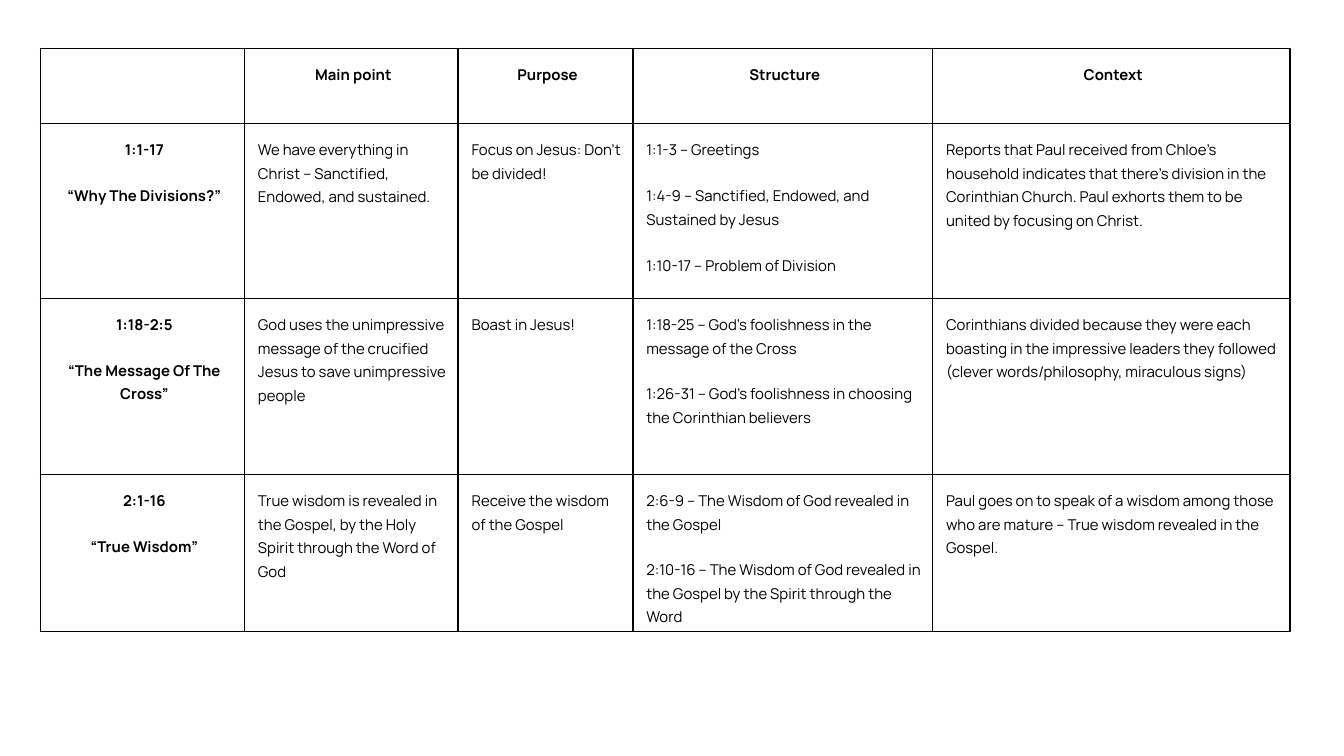
from pptx import Presentation
from pptx.dml.color import RGBColor
from pptx.enum.text import PP_ALIGN
from pptx.oxml import parse_xml
from pptx.oxml.ns import nsdecls
from pptx.util import Inches, Pt

HEADINGS = ["", "Main point", "Purpose", "Structure", "Context"]
PASSAGES = [
    [
        ["1:1-17", "“Why The Divisions?”"],
        ["We have everything in Christ – Sanctified, Endowed, and sustained."],
        ["Focus on Jesus: Don’t be divided!"],
        [
            "1:1-3 – Greetings",
            "1:4-9 – Sanctified, Endowed, and Sustained by Jesus",
            "1:10-17 – Problem of Division",
        ],
        ["Reports that Paul received from Chloe’s household indicates that there’s division "
         "in the Corinthian Church. Paul exhorts them to be united by focusing on Christ."],
    ],
    [
        ["1:18-2:5", "“The Message Of The Cross”"],
        ["God uses the unimpressive message of the crucified Jesus to save unimpressive people"],
        ["Boast in Jesus!"],
        [
            "1:18-25 – God’s foolishness in the message of the Cross",
            "1:26-31 – God’s foolishness in choosing the Corinthian believers",
        ],
        ["Corinthians divided because they were each boasting in the impressive leaders "
         "they followed (clever words/philosophy, miraculous signs)"],
    ],
    [
        ["2:1-16", "“True Wisdom”"],
        ["True wisdom is revealed in the Gospel, by the Holy Spirit through the Word of God"],
        ["Receive the wisdom of the Gospel"],
        [
            "2:6-9 – The Wisdom of God revealed in the Gospel",
            "2:10-16 – The Wisdom of God revealed in the Gospel by the Spirit through the Word",
        ],
        ["Paul goes on to speak of a wisdom among those who are mature – "
         "True wisdom revealed in the Gospel."],
    ],
]
SLIDE_WIDTH = Inches(10)
SLIDE_HEIGHT = SLIDE_WIDTH * 9 // 16
COLUMN_WIDTHS = [1.52, 1.59, 1.3, 2.23, 2.66]
ROW_HEIGHTS = [0.56, 1.3, 1.31, 1.17]
INK = "000000"
MARGINS = {
    "margin_left": Inches(0.07),
    "margin_top": Inches(0.1),
    "margin_right": Inches(0.07),
    "margin_bottom": 0,
}
SPACING = {"line_spacing": 1.15, "space_before": Pt(12)}
FONT = {"name": "Manrope", "size": Pt(8)}


def apply(target, values):
    for name, value in values.items():
        setattr(target, name, value)


def paint(color, value):
    color.rgb = RGBColor.from_string(value)


def add_borders(cell):
    properties = cell._tc.get_or_add_tcPr()
    for position, side in enumerate(("lnL", "lnR", "lnT", "lnB")):
        properties.insert(position, parse_xml(
            f'<a:{side} {nsdecls("a")} w="{Pt(1)}"><a:solidFill>'
            f'<a:srgbClr val="{INK}"/></a:solidFill></a:{side}>'))


def fill_cell(cell, lines, is_label):
    apply(cell, MARGINS)
    cell.fill.background()
    add_borders(cell)
    cell.text_frame.text = "\n".join(lines)
    for paragraph in cell.text_frame.paragraphs:
        apply(paragraph, SPACING)
        paragraph.alignment = PP_ALIGN.CENTER if is_label else PP_ALIGN.LEFT
        indent = paragraph._p.get_or_add_pPr()
        indent.set("marL", str(Inches(0.03)))
        indent.set("indent", "0")
        for run in paragraph.runs:
            apply(run.font, FONT)
            run.font.bold = is_label
            paint(run.font.color, INK)


def main():
    deck = Presentation()
    deck.slide_width, deck.slide_height = SLIDE_WIDTH, SLIDE_HEIGHT
    slide = deck.slides.add_slide(deck.slide_layouts[6])

    rows = [[[heading] for heading in HEADINGS]] + PASSAGES
    overview = slide.shapes.add_table(
        len(rows), len(HEADINGS), Inches(0.3), Inches(0.36),
        Inches(sum(COLUMN_WIDTHS)), Inches(sum(ROW_HEIGHTS))).table
    apply(overview, {"first_row": False, "horz_banding": False})
    for column, width in zip(overview.columns, COLUMN_WIDTHS):
        column.width = Inches(width)
    for row, height in zip(overview.rows, ROW_HEIGHTS):
        row.height = Inches(height)
    for row_index, row in enumerate(rows):
        for column_index, lines in enumerate(row):
            is_label = row_index == 0 or column_index == 0
            fill_cell(overview.cell(row_index, column_index), lines, is_label)

    deck.save("out.pptx")


if __name__ == "__main__":
    main()
